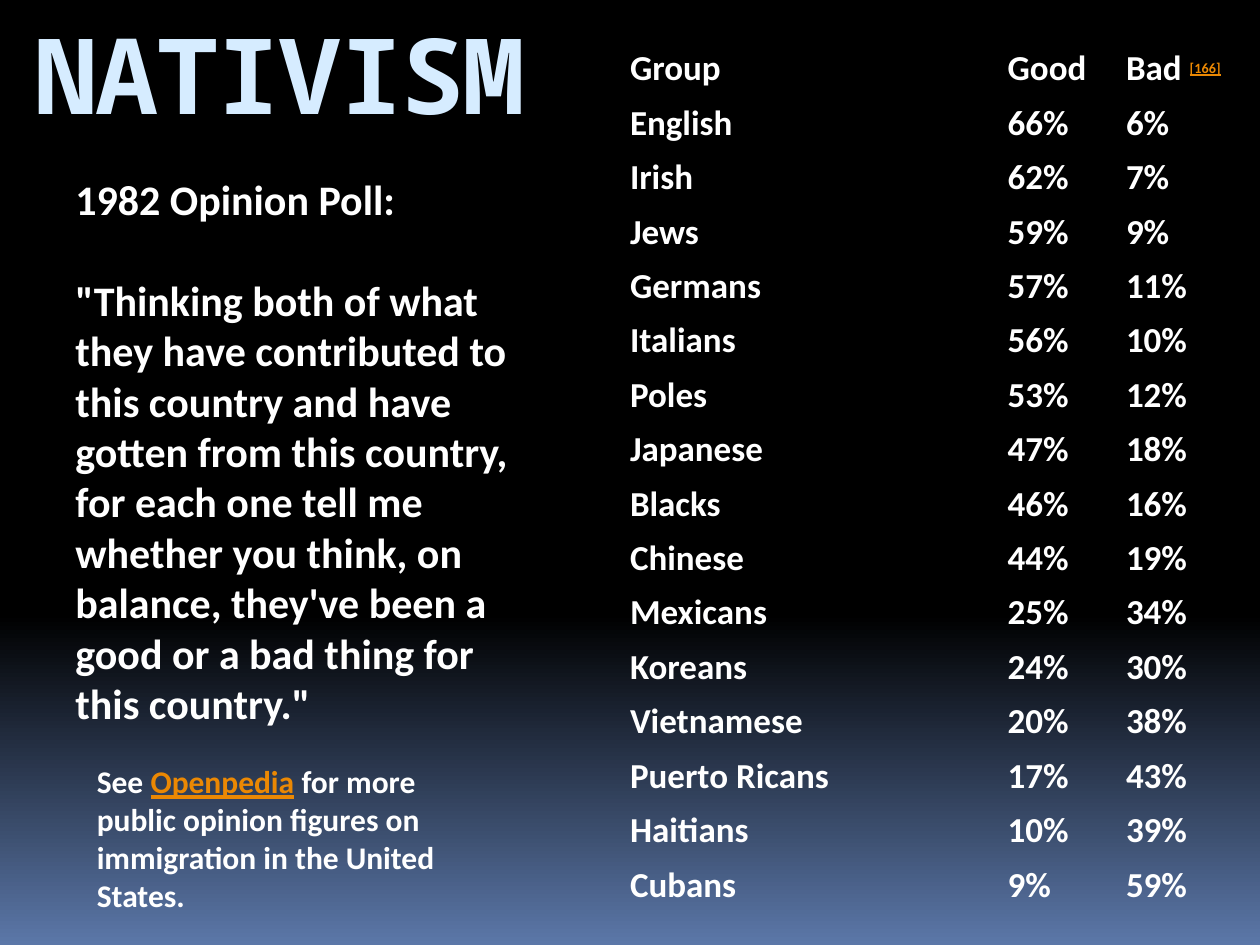
from dataclasses import dataclass

from pptx import Presentation
from pptx.dml.color import RGBColor
from pptx.enum.text import MSO_ANCHOR, MSO_AUTO_SIZE, PP_ALIGN
from pptx.util import Inches, Pt


@dataclass(frozen=True)
class Theme:
    ink: str = "FFFFFF"
    head: str = "D6ECFF"
    link: str = "EB8803"
    night: str = "000000"
    dusk: str = "5B77A8"
    font: str = "Calibri"
    mono: str = "Noto Sans Mono"
    title: int = 60
    body: int = 24
    cell: int = 20
    note: int = 18
    ref: int = 14


T = Theme()
WIDE, HIGH = Inches(10), Inches(7.5)
PLAIN = "{2D5ABB26-0587-4C30-8999-92F81FD0307C}"  # no style, no grid

POLL = [
    ("English", 66, 6), ("Irish", 62, 7), ("Jews", 59, 9),
    ("Germans", 57, 11), ("Italians", 56, 10), ("Poles", 53, 12),
    ("Japanese", 47, 18), ("Blacks", 46, 16), ("Chinese", 44, 19),
    ("Mexicans", 25, 34), ("Koreans", 24, 30), ("Vietnamese", 20, 38),
    ("Puerto Ricans", 17, 43), ("Haitians", 10, 39), ("Cubans", 9, 59),
]
QUOTE = (
    '"Thinking both of what they have contributed to this country and have '
    "gotten from this country, for each one tell me whether you think, on "
    "balance, they've been a good or a bad thing for this country.\""
)


def box(left, top, width, height):
    """Turn shares of the slide into lengths."""
    return (round(left * WIDE), round(top * HIGH),
            round(width * WIDE), round(height * HIGH))


def add_run(para, text, size, color=T.ink, font=T.font, line=False):
    run = para.add_run()
    run.text = text
    face = run.font
    face.size, face.name, face.bold = Pt(size), font, True
    face.color.rgb = RGBColor.from_string(color)
    if line:
        face.underline = True
    return run


def paint_back(slide):
    fill = slide.background.fill
    fill.gradient()
    fill.gradient_angle = 270
    for stop, place, color in zip(fill.gradient_stops, (0.65, 1),
                                  (T.night, T.dusk)):
        stop.position = place
        stop.color.rgb = RGBColor.from_string(color)


def set_title(slide, area):
    title = slide.shapes.title
    title.left, title.top, title.width, title.height = area
    frame = title.text_frame
    frame.auto_size = MSO_AUTO_SIZE.NONE
    frame.vertical_anchor = MSO_ANCHOR.TOP
    frame.margin_top = 0
    para = frame.paragraphs[0]
    para.alignment = PP_ALIGN.LEFT
    run = add_run(para, "NATIVISM", T.title, T.head, T.mono)
    run.font._element.set("spc", "-100")


def add_frame(slide, area):
    frame = slide.shapes.add_textbox(*area).text_frame
    frame.word_wrap = True
    return frame


def add_quote(slide, area):
    frame = add_frame(slide, area)
    add_run(frame.paragraphs[0], "1982 Opinion Poll:", T.body)
    para = frame.add_paragraph()
    para.space_before = Pt(1.2 * T.body)
    add_run(para, QUOTE, T.body)


def add_note(slide, area):
    para = add_frame(slide, area).paragraphs[0]
    add_run(para, "See ", T.note)
    add_run(para, "Openpedia", T.note, T.link, line=True)
    add_run(para, " for more public opinion figures on immigration "
                  "in the United States.", T.note)


def add_poll(slide, area):
    rows = [("Group", "Good", "Bad ")]
    rows += [(name, f"{good}%", f"{bad}%") for name, good, bad in POLL]
    shape = slide.shapes.add_table(len(rows), 3, *area)
    table = shape.table
    table.first_row = table.horz_banding = False
    table._tbl.tblPr[0].text = PLAIN
    for col, share in zip(table.columns, (0.59, 0.185, 0.225)):
        col.width = round(share * area[2])
    for line, row in zip(table.rows, rows):
        line.height = area[3] // len(rows)
        for cell, text in zip(line.cells, row):
            cell.fill.background()
            cell.vertical_anchor = MSO_ANCHOR.MIDDLE
            cell.margin_left = cell.margin_right = Inches(0.08)
            cell.margin_top = cell.margin_bottom = Inches(0.04)
            add_run(cell.text_frame.paragraphs[0], text, T.cell)
    para = table.cell(0, 2).text_frame.paragraphs[0]
    ref = add_run(para, "[166]", T.ref, T.link, line=True)
    ref.font._element.set("baseline", "30000")


def main():
    deck = Presentation()
    deck.slide_width, deck.slide_height = WIDE, HIGH
    slide = deck.slides.add_slide(deck.slide_layouts[5])
    paint_back(slide)
    set_title(slide, box(0.017, 0.01, 0.425, 0.133))
    add_poll(slide, box(0.492, 0.044, 0.508, 0.922))
    add_note(slide, box(0.067, 0.8, 0.333, 0.175))
    add_quote(slide, box(0.05, 0.177, 0.392, 0.605))
    deck.save("out.pptx")


if __name__ == "__main__":
    main()
